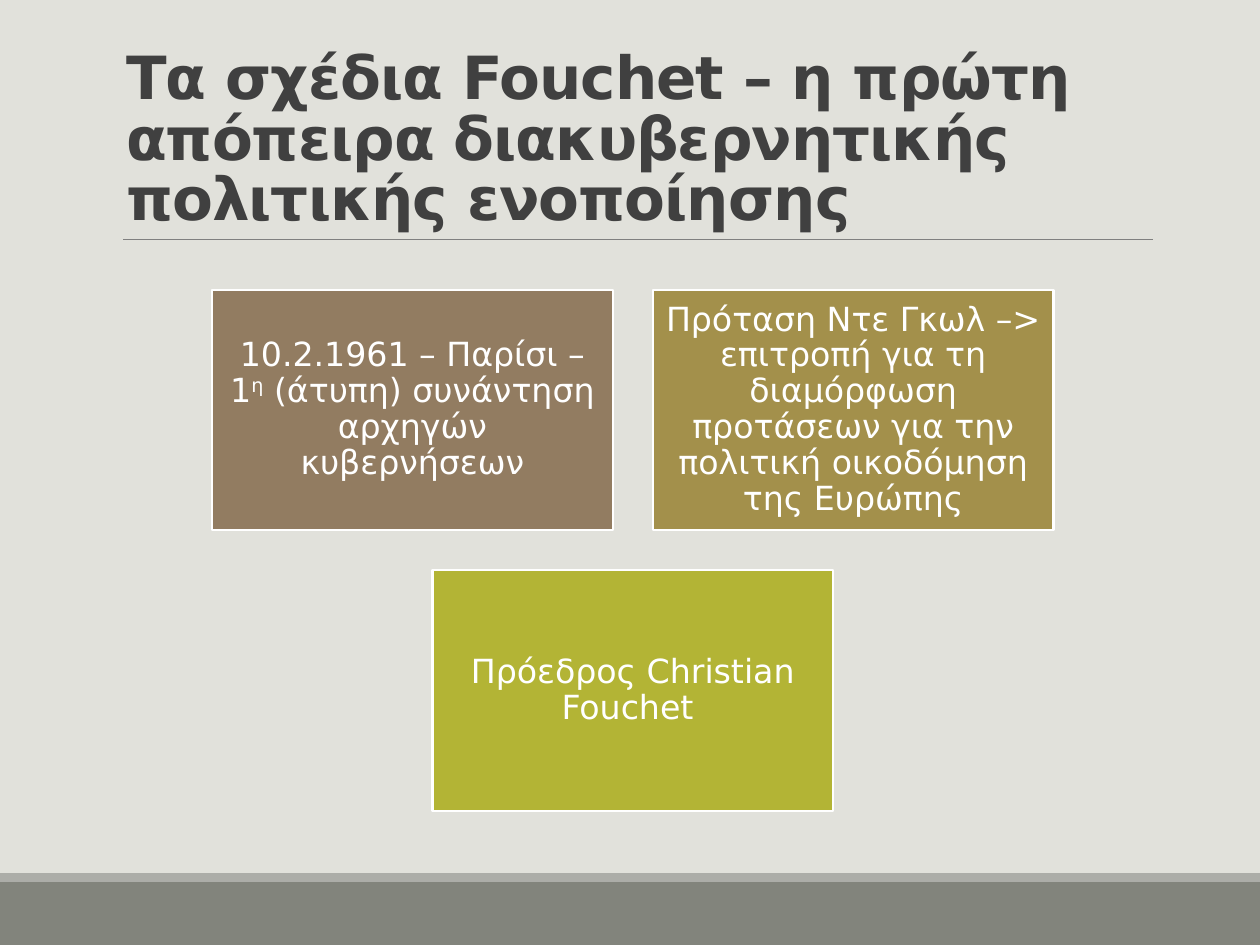
from dataclasses import dataclass

from lxml.etree import SubElement
from pptx import Presentation
from pptx.dml.color import RGBColor as RGB
from pptx.enum.shapes import MSO_CONNECTOR as Conn, MSO_SHAPE as Shape
from pptx.enum.text import MSO_ANCHOR as Anchor, MSO_AUTO_SIZE as AutoSize, PP_ALIGN as Align
from pptx.oxml.ns import qn
from pptx.util import Pt


@dataclass(frozen=True)
class Theme:
    font: str = "DejaVu Sans"
    title_size: float = 34
    card_size: float = 19
    background: str = "E1E1DB"
    title: str = "404040"
    rule: str = "808080"
    white: str = "FFFFFF"
    stripe: str = "ACADA8"
    footer: str = "82847C"


@dataclass(frozen=True)
class Box:
    left: float
    top: float
    width: float
    height: float


@dataclass(frozen=True)
class Run:
    text: str
    superscript: bool = False


@dataclass(frozen=True)
class Card:
    fill: str
    runs: tuple[Run, ...]


THEME = Theme()
WIDTH, HEIGHT = 720, 540
CARD_W, CARD_H, GAP = 229, 137.4, 22.9
CENTER, CARDS_TOP = 361.6, 165.6

BANDS = (
    (Box(0, 504, WIDTH, 36), THEME.footer),
    (Box(0, 499, WIDTH, 5), THEME.stripe),
)
ROWS = (
    (
        Card("927C61", (
            Run("10.2.1961 – Παρίσι – 1"),
            Run("η", superscript=True),
            Run(" (άτυπη) συνάντηση αρχηγών κυβερνήσεων"),
        )),
        Card("A3904B", (
            Run("Πρόταση Ντε Γκωλ –> επιτροπή για τη διαμόρφωση προτάσεων "
                "για την πολιτική οικοδόμηση της Ευρώπης"),
        )),
    ),
    (Card("B3B435", (Run("Πρόεδρος Christian Fouchet "),)),),
)


def style_run(r, size: float, color: str, bold: bool = False) -> None:
    r.font.name = THEME.font
    r.font.size = Pt(size)
    r.font.bold = bold
    r.font.color.rgb = RGB.from_string(color)


def add_rect(s, box: Box, fill: str):
    sp = s.shapes.add_shape(
        Shape.RECTANGLE, Pt(box.left), Pt(box.top), Pt(box.width), Pt(box.height))
    sp.shadow.inherit = False
    sp.fill.solid()
    sp.fill.fore_color.rgb = RGB.from_string(fill)
    sp.line.fill.background()
    return sp


def add_rule(s, left: float, right: float, y: float) -> None:
    line = s.shapes.add_connector(Conn.STRAIGHT, Pt(left), Pt(y), Pt(right), Pt(y))
    line.line.color.rgb = RGB.from_string(THEME.rule)
    line.line.width = Pt(0.5)
    SubElement(line._element.spPr, qn("a:effectLst"))


def set_title(s, box: Box, text: str) -> None:
    sp = s.shapes.title
    sp.left, sp.top, sp.width, sp.height = (
        Pt(v) for v in (box.left, box.top, box.width, box.height))
    tf = sp.text_frame
    tf.text = text
    tf.word_wrap = True
    tf.auto_size = AutoSize.NONE
    tf.vertical_anchor = Anchor.BOTTOM
    p = tf.paragraphs[0]
    p.alignment = Align.LEFT
    p.line_spacing = 0.85
    r = p.runs[0]
    style_run(r, THEME.title_size, THEME.title, bold=True)
    r.font._element.set("spc", "-50")


def add_card(s, card: Card, left: float, top: float) -> None:
    sp = add_rect(s, Box(left, top, CARD_W, CARD_H), card.fill)
    sp.line.color.rgb = RGB.from_string(THEME.white)
    sp.line.width = Pt(1.25)
    tf = sp.text_frame
    tf.word_wrap = True
    tf.vertical_anchor = Anchor.MIDDLE
    tf.margin_left = tf.margin_right = tf.margin_top = tf.margin_bottom = Pt(5.7)
    p = tf.paragraphs[0]
    p.alignment = Align.CENTER
    p.line_spacing = 0.9
    for run in card.runs:
        r = p.add_run()
        r.text = run.text
        style_run(r, THEME.card_size, THEME.white)
        if run.superscript:
            r.font._element.set("baseline", "30000")


def add_cards(s) -> None:
    for i, row in enumerate(ROWS):
        row_width = len(row) * CARD_W + (len(row) - 1) * GAP
        for j, card in enumerate(row):
            left = CENTER - row_width / 2 + j * (CARD_W + GAP)
            add_card(s, card, left, CARDS_TOP + i * (CARD_H + GAP))


def main() -> None:
    prs = Presentation()
    prs.slide_width, prs.slide_height = Pt(WIDTH), Pt(HEIGHT)
    s = prs.slides.add_slide(prs.slide_layouts.get_by_name("Title Only"))
    s.background.fill.solid()
    s.background.fill.fore_color.rgb = RGB.from_string(THEME.background)
    for box, fill in BANDS:
        add_rect(s, box, fill)
    add_rule(s, 70.5, 659, 136.8)
    set_title(s, Box(64.8, 22.3, 594, 114.5),
              "Τα σχέδια Fouchet – η πρώτη απόπειρα διακυβερνητικής πολιτικής ενοποίησης")
    add_cards(s)
    prs.save("out.pptx")


if __name__ == "__main__":
    main()
